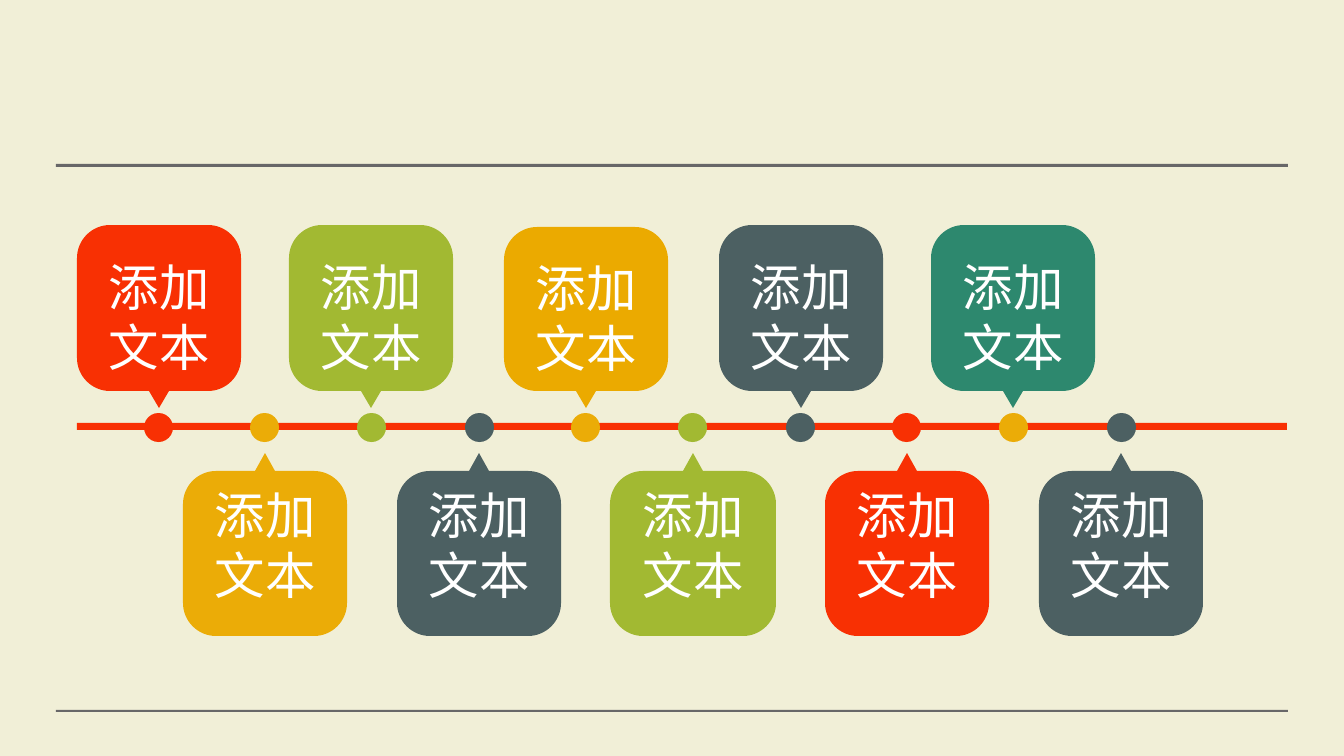
from dataclasses import dataclass

from lxml import etree
from pptx import Presentation
from pptx.dml.color import RGBColor
from pptx.enum.shapes import MSO_SHAPE as Shape
from pptx.enum.text import MSO_ANCHOR as Anchor, PP_ALIGN as Align
from pptx.oxml.ns import qn
from pptx.util import Pt


@dataclass(frozen=True)
class Theme:
    background: str = "F1EFD7"
    rule: str = "686768"
    red: str = "F83003"
    amber: str = "EBAC07"
    gold: str = "EBAA00"
    green: str = "A2B932"
    slate: str = "4C6062"
    teal: str = "2D886E"
    text: str = "FFFFFF"
    font: str = "Noto Sans CJK SC"
    label_size: int = 36


def px(length):
    return round(length * 12192000 / 1344)


def paint(shape, color):
    shape.shadow.inherit = False
    shape.fill.solid()
    shape.fill.fore_color.rgb = RGBColor.from_string(color)
    shape.line.fill.background()


theme = Theme()
presentation = Presentation()
presentation.slide_width = px(1344)
presentation.slide_height = px(756)
slide = presentation.slides.add_slide(presentation.slide_layouts[6])
slide.background.fill.solid()
slide.background.fill.fore_color.rgb = RGBColor.from_string(theme.background)

bars = [
    (56, 164, 1232, 3, theme.rule),
    (56, 710, 1232, 2, theme.rule),
    (77, 423, 1210, 7, theme.red),
]
for left, top, width, height, color in bars:
    bar = slide.shapes.add_shape(Shape.RECTANGLE, px(left), px(top), px(width), px(height))
    paint(bar, color)

UPPER_TIP, LOWER_TIP = 408, 453
UPPER_BASE, LOWER_BASE = 391, 471
UPPER_TOP, GOLD_TOP, LOWER_BOTTOM = 225, 227, 636
RADIUS, POINTER = 33, 10
CURVE = 0.55

milestones = [
    (144, theme.red, 77, 164, UPPER_TOP, theme.red),
    (250, theme.amber, 183, 164, LOWER_BOTTOM, theme.amber),
    (357, theme.green, 289, 164, UPPER_TOP, theme.green),
    (465, theme.slate, 397, 164, LOWER_BOTTOM, theme.slate),
    (571, theme.amber, 504, 164, GOLD_TOP, theme.gold),
    (678, theme.green, 610, 166, LOWER_BOTTOM, theme.green),
    (786, theme.slate, 719, 164, UPPER_TOP, theme.slate),
    (892, theme.red, 825, 164, LOWER_BOTTOM, theme.red),
    (999, theme.amber, 931, 164, UPPER_TOP, theme.teal),
    (1107, theme.slate, 1039, 164, LOWER_BOTTOM, theme.slate),
]

for dot_left, dot_color, *_ in milestones:
    dot = slide.shapes.add_shape(Shape.OVAL, px(dot_left), px(413), px(29), px(29))
    paint(dot, dot_color)

for _, _, left, width, edge, color in milestones[::2] + milestones[::-2]:
    is_lower = edge == LOWER_BOTTOM
    base, tip, down = (LOWER_BASE, LOWER_TIP, -1) if is_lower else (UPPER_BASE, UPPER_TIP, 1)
    right, middle = left + width, left + width / 2
    near_base, near_edge = base - down * RADIUS, edge + down * RADIUS
    outline = [
        (middle + POINTER, base),
        (right - RADIUS, base),
        (right, near_base),
        (right, near_edge),
        (right - RADIUS, edge),
        (left + RADIUS, edge),
        (left, near_edge),
        (left, near_base),
        (left + RADIUS, base),
        (middle - POINTER, base),
        (middle, tip),
    ]
    points = [(px(x), px(y)) for x, y in outline]
    builder = slide.shapes.build_freeform(*points[0])
    builder.add_line_segments(points[1:], close=True)
    callout = builder.convert_to_shape()
    paint(callout, color)

    segments = list(callout._element.iter(qn("a:lnTo")))
    for end in (2, 4, 6, 8):
        (x1, y1), (x2, y2) = points[end - 1], points[end]
        corner_x, corner_y = (x2, y1) if end in (2, 6) else (x1, y2)
        segment = segments[end - 1]
        segment.tag = qn("a:cubicBezTo")
        for position, (x, y) in enumerate([(x1, y1), (x2, y2)]):
            control_x = round(x + CURVE * (corner_x - x)) - callout.left
            control_y = round(y + CURVE * (corner_y - y)) - callout.top
            control = etree.Element(qn("a:pt"), x=str(control_x), y=str(control_y))
            segment.insert(position, control)

    frame = callout.text_frame
    frame.word_wrap = True
    frame.vertical_anchor = Anchor.MIDDLE
    paragraph = frame.paragraphs[0]
    paragraph.alignment = Align.CENTER
    run = paragraph.add_run()
    run.text = "添加文本"
    run.font.size = Pt(theme.label_size)
    run.font.name = theme.font
    run.font.color.rgb = RGBColor.from_string(theme.text)
    etree.SubElement(run.font._element, qn("a:ea"), typeface=theme.font)

presentation.save("out.pptx")
